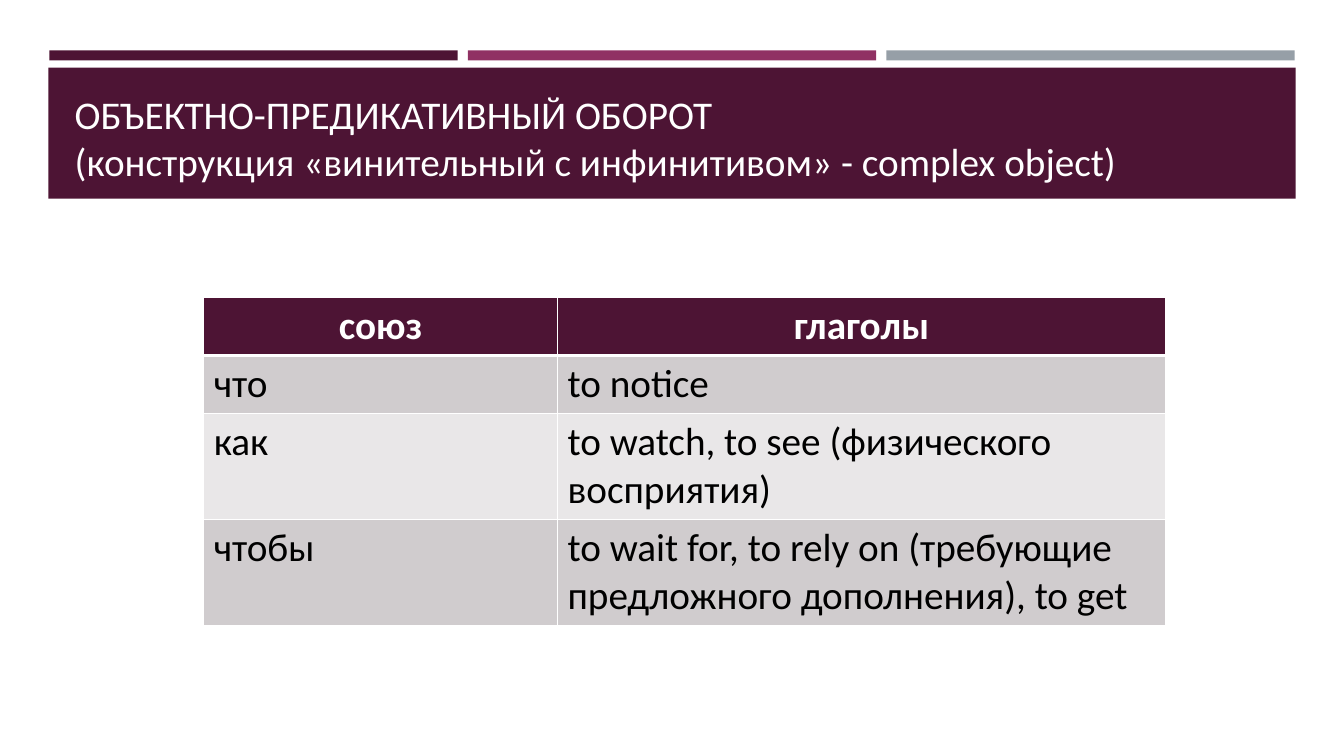
from lxml import etree
from pptx import Presentation
from pptx.dml.color import RGBColor
from pptx.enum.shapes import MSO_SHAPE
from pptx.enum.text import MSO_ANCHOR, MSO_AUTO_SIZE, PP_ALIGN
from pptx.oxml.ns import qn
from pptx.util import Inches, Pt

RECT = MSO_SHAPE.RECTANGLE
BOTTOM = MSO_ANCHOR.BOTTOM
NO_FIT = MSO_AUTO_SIZE.NONE
LEFT, CENTER = PP_ALIGN.LEFT, PP_ALIGN.CENTER
PLUM, WHITE, BLACK = "4D1434", "FFFFFF", "000000"
BANDS = ["D0CCCE", "E9E7E8"]


def rgb(color):
    return RGBColor.from_string(color)


def format_text(tf, color, align, bold=False):
    for p in tf.paragraphs:
        p.alignment = align
        for r in p.runs:
            r.font.name = "Calibri"
            r.font.size = Pt(28)
            r.font.bold = bold
            r.font.color.rgb = rgb(color)


prs = Presentation()
prs.slide_width = Inches(13.33)
prs.slide_height = Inches(7.5)
s = prs.slides.add_slide(prs.slide_layouts[5])

BAR_W, BAR_STEP = 4.05, 4.15
bars = [(0.49 + i * BAR_STEP, 0.5, BAR_W, 0.1, color)
        for i, color in enumerate([PLUM, "903163", "969FA7"])]
for x, y, w, h, color in bars + [(0.48, 0.67, 12.37, 1.3, PLUM)]:
    sp = s.shapes.add_shape(RECT, Inches(x), Inches(y), Inches(w), Inches(h))
    sp.shadow.inherit = False
    sp.fill.solid()
    sp.fill.fore_color.rgb = rgb(color)
    sp.line.fill.background()

title = s.shapes.title
s.shapes._spTree.append(title._element)
title.left, title.top = Inches(0.64), Inches(0.77)
title.width, title.height = Inches(12.06), Inches(1.11)
tf = title.text_frame
tf.text = ("ОБЪЕКТНО-ПРЕДИКАТИВНЫЙ ОБОРОТ\v"
           "(конструкция «винительный с инфинитивом» - complex object)")
tf.word_wrap = True
tf.auto_size = NO_FIT
tf.vertical_anchor = BOTTOM
format_text(tf, WHITE, LEFT)

rows = [
    ("союз", "глаголы"),
    ("что", "to notice"),
    ("как", "to watch, to see (физического восприятия)"),
    ("чтобы", "to wait for, to rely on (требующие предложного дополнения), to get"),
]
col_widths = [3.51, 6.03]
row_heights = [0.57, 0.57, 1.05, 1.05]
table = s.shapes.add_table(len(rows), len(col_widths), Inches(2.02), Inches(2.95),
                           Inches(sum(col_widths)), Inches(sum(row_heights))).table
for col, width in zip(table.columns, col_widths):
    col.width = Inches(width)
for row, height in zip(table.rows, row_heights):
    row.height = Inches(height)

for i, texts in enumerate(rows):
    header = i == 0
    for j, text in enumerate(texts):
        cell = table.cell(i, j)
        cell.text_frame.text = text
        format_text(cell.text_frame, WHITE if header else BLACK,
                    CENTER if header else LEFT, header)
        tcPr = cell._tc.get_or_add_tcPr()
        for side in ("lnL", "lnR", "lnT", "lnB"):
            thick = (header and side == "lnB") or (i == 1 and side == "lnT")
            ln = etree.SubElement(tcPr, qn("a:" + side), w=str(Pt(3 if thick else 1)))
            fill = etree.SubElement(ln, qn("a:solidFill"))
            etree.SubElement(fill, qn("a:srgbClr"), val=WHITE)
        cell.fill.solid()
        cell.fill.fore_color.rgb = rgb(PLUM if header else BANDS[(i - 1) % 2])

prs.save("out.pptx")
